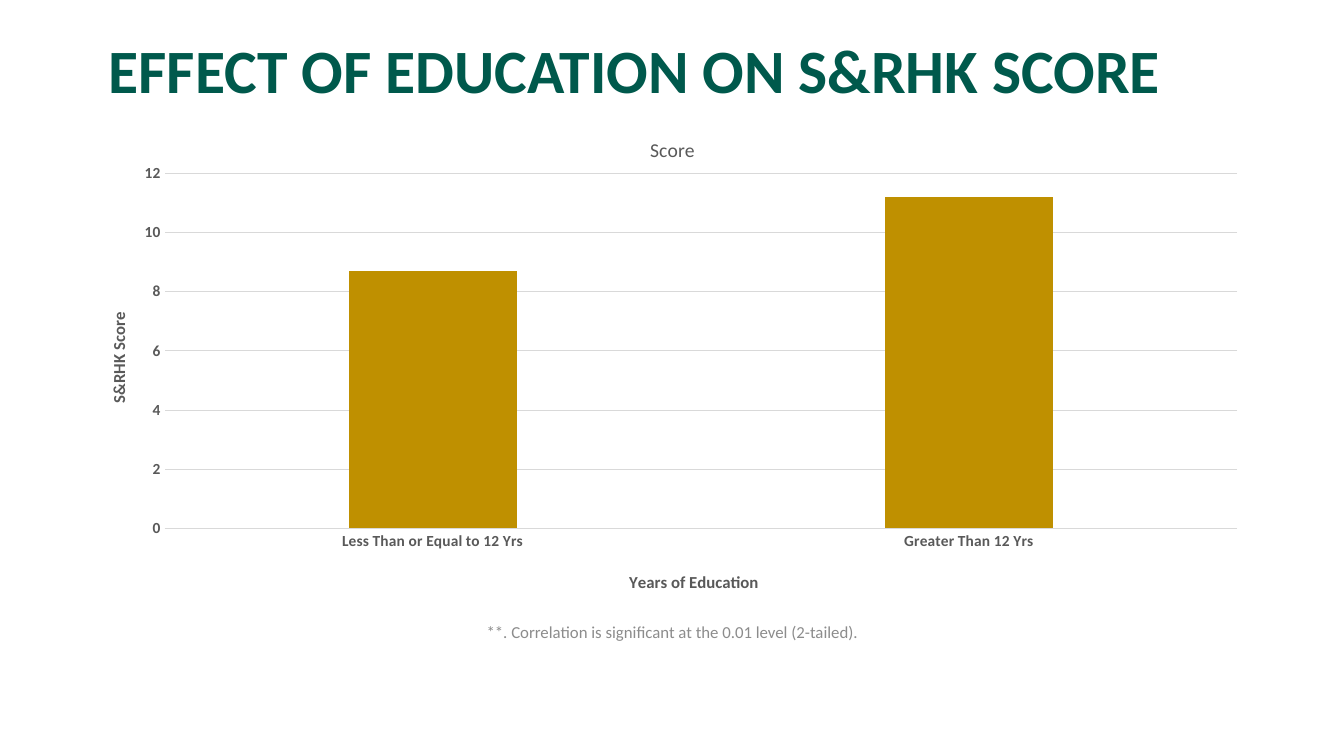
from lxml import etree
from pptx import Presentation
from pptx.chart.data import CategoryChartData
from pptx.dml.color import RGBColor
from pptx.enum.chart import XL_CHART_TYPE, XL_TICK_MARK
from pptx.enum.text import MSO_ANCHOR, PP_ALIGN
from pptx.oxml.ns import qn
from pptx.util import Inches, Pt

COLUMNS = XL_CHART_TYPE.COLUMN_CLUSTERED
NO_TICK = XL_TICK_MARK.NONE
MIDDLE = MSO_ANCHOR.MIDDLE
CENTER = PP_ALIGN.CENTER

FONT = "Calibri"
GREEN, GOLD = "00594C", "BF9000"
DARK_GREY, MID_GREY, PALE_GREY = "595959", "8C8C8C", "D9D9D9"

SCORES = {"Less Than or Equal to 12 Yrs": 8.7, "Greater Than 12 Yrs": 11.2}


def rgb(color):
    return RGBColor.from_string(color)


def set_font(font, size, color, bold=False):
    for name, value in {"name": FONT, "size": Pt(size), "bold": bold}.items():
        setattr(font, name, value)
    font.color.rgb = rgb(color)


def set_line(line, color):
    line.color.rgb = rgb(color)
    line.width = Pt(0.75)


def add_text(slide, box, text, size, color, bold=False, spacing=1.0):
    frame = slide.shapes.add_textbox(*map(Inches, box)).text_frame
    frame.word_wrap = True
    frame.vertical_anchor = MIDDLE
    paragraph = frame.paragraphs[0]
    paragraph.alignment = CENTER
    paragraph.line_spacing = spacing
    run = paragraph.add_run()
    run.text = text
    set_font(run.font, size, color, bold)


def make_layout(**values):
    """Manual chart layout, in fractions of the chart's box."""
    layout = etree.Element(qn("c:layout"))
    manual = etree.SubElement(layout, qn("c:manualLayout"))
    for name, value in values.items():
        etree.SubElement(manual, qn(f"c:{name}")).set("val", str(value))
    return layout


def set_title(title, text, size, bold=False):
    title.text_frame.text = text
    set_font(title.text_frame.paragraphs[0].runs[0].font, size, DARK_GREY, bold)


def format_axis(axis, title, x, y):
    axis.major_tick_mark = axis.minor_tick_mark = NO_TICK
    set_font(axis.tick_labels.font, 11, DARK_GREY, True)
    set_title(axis.axis_title, title, 12, True)
    element = axis.axis_title._element
    for old in element.findall(qn("c:layout")):
        element.remove(old)
    element.find(qn("c:tx")).addnext(
        make_layout(xMode="edge", yMode="edge", x=x, y=y))


def add_score_chart(slide, box):
    data = CategoryChartData()
    data.categories = list(SCORES)
    data.add_series("Score", list(SCORES.values()))
    chart = slide.shapes.add_chart(COLUMNS, *map(Inches, box), data).chart
    set_font(chart.font, 10, "000000")
    chart.has_legend = False
    chart.has_title = True
    set_title(chart.chart_title, "Score", 14)

    # Columns
    plot = chart.plots[0]
    for name, value in {"gap_width": 219, "overlap": -27,
                        "vary_by_categories": False}.items():
        setattr(plot, name, value)
    fill = plot.series[0].format.fill
    fill.solid()
    fill.fore_color.rgb = rgb(GOLD)

    # Axes
    education, score = chart.category_axis, chart.value_axis
    format_axis(education, "Years of Education", 0.46, 0.94)
    set_line(education.format.line, PALE_GREY)
    format_axis(score, "S&RHK Score", 0.01, 0.4)
    for name, value in {"minimum_scale": 0, "maximum_scale": 12,
                        "major_unit": 2, "has_major_gridlines": True}.items():
        setattr(score, name, value)
    score.format.line.fill.background()
    set_line(score.major_gridlines.format.line, PALE_GREY)

    # Plot area
    area = chart._chartSpace.chart.plotArea
    for old in area.findall(qn("c:layout")):
        area.remove(old)
    area.insert(0, make_layout(layoutTarget="inner", xMode="edge",
                               yMode="edge", x=0.062, y=0.116,
                               w=0.925, h=0.742))


def build_slide(slide):
    add_text(slide, (0.55, 0, 11.5, 1.45), "EFFECT OF EDUCATION ON S&RHK SCORE",
             44, GREEN, bold=True, spacing=0.9)
    add_text(slide, (4.42, 6.07, 4.5, 0.4),
             "**. Correlation is significant at the 0.01 level (2-tailed).",
             12, MID_GREY)
    add_score_chart(slide, (0.92, 1.17, 11.5, 4.76))


def main():
    deck = Presentation()
    deck.slide_width, deck.slide_height = Inches(13.33), Inches(7.5)
    build_slide(deck.slides.add_slide(deck.slide_layouts[6]))
    deck.save("out.pptx")


if __name__ == "__main__":
    main()
